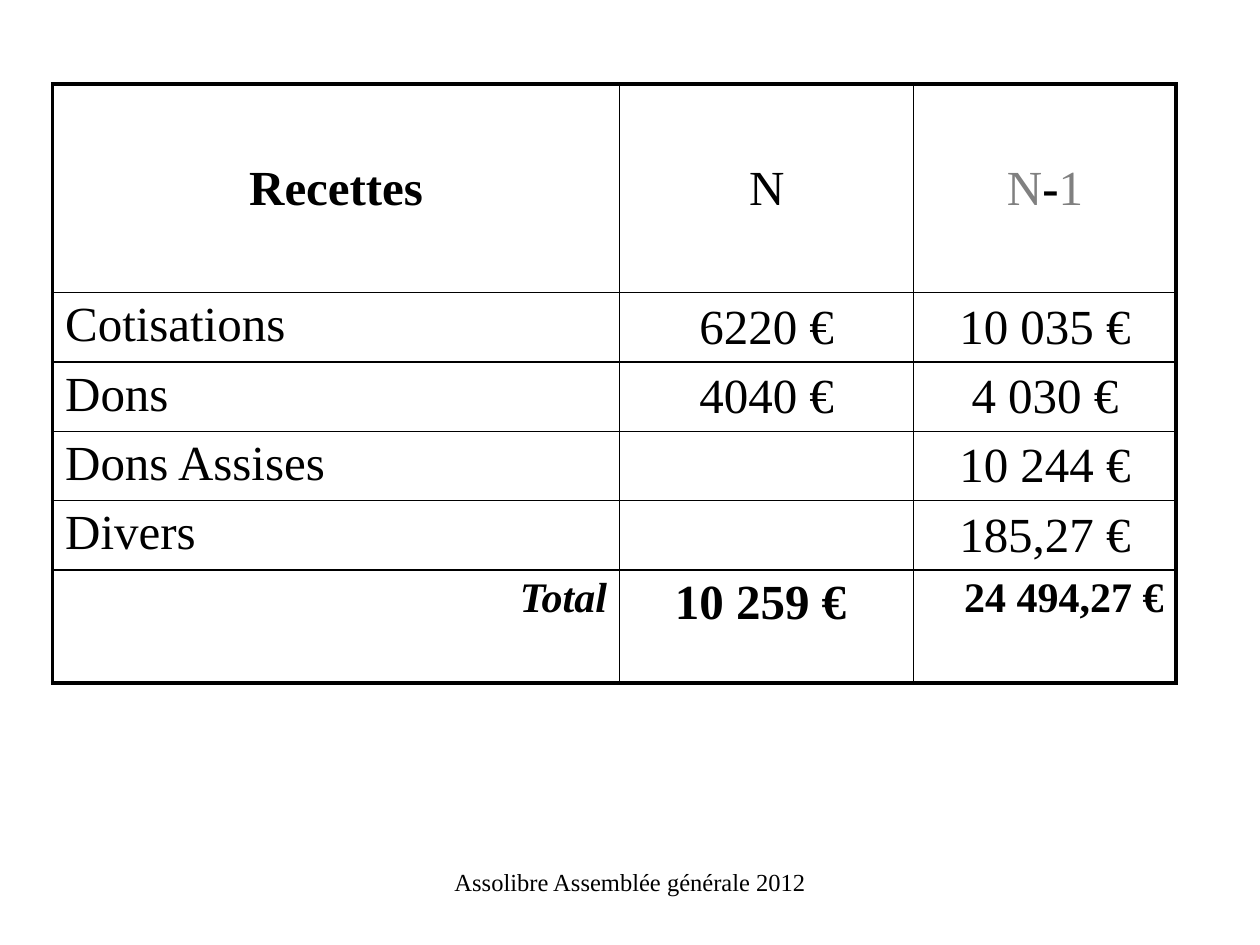
from lxml import etree
from pptx import Presentation
from pptx.dml.color import RGBColor
from pptx.enum.text import MSO_ANCHOR, PP_ALIGN
from pptx.oxml.ns import qn
from pptx.util import Cm, Pt

LEFT, CENTER, RIGHT = PP_ALIGN.LEFT, PP_ALIGN.CENTER, PP_ALIGN.RIGHT
TOP, MIDDLE = MSO_ANCHOR.TOP, MSO_ANCHOR.MIDDLE
FONT = "Times New Roman"
BLACK, GREY, WHITE = "000000", "808080", "FFFFFF"
THIN, THICK = Pt(1), Pt(2.25)

COLUMN_WIDTHS = [11.43, 5.93, 5.29]
ROW_HEIGHTS = [4.21] + [1.35] * 4 + [2.28]
RECEIPTS = [
    ("Recettes", "N", "N-1"),
    ("Cotisations", "6220 €", "10 035 €"),
    ("Dons", "4040 €", "4 030 €"),
    ("Dons Assises", "", "10 244 €"),
    ("Divers", "", "185,27 €"),
    ("Total", "10 259 € ", "24 494,27 €"),
]
LAST_ROW, LAST_COLUMN = len(RECEIPTS) - 1, len(COLUMN_WIDTHS) - 1


def color(hex_code):
    """Return the colour for a hex string."""
    return RGBColor.from_string(hex_code)


def style_paragraph(paragraph, size, align, bold=False, italic=False):
    """Set the alignment and font of a paragraph."""
    paragraph.alignment = align
    font = paragraph.font
    font.name, font.size = FONT, Pt(size)
    font.bold, font.italic = bold, italic
    font.color.rgb = color(BLACK)


def set_borders(cell, widths):
    """Draw the left, right, top and bottom borders of a cell, in that order."""
    properties = cell._tc.get_or_add_tcPr()
    for index, (side, width) in enumerate(zip(("lnL", "lnR", "lnT", "lnB"), widths)):
        line = etree.Element(qn(f"a:{side}"), w=str(width))
        fill = etree.SubElement(line, qn("a:solidFill"))
        etree.SubElement(fill, qn("a:srgbClr"), val=BLACK)
        properties.insert(index, line)


def cell_style(row, column):
    """Return the size, alignment, bold and italic of a table position."""
    if row == LAST_ROW:
        return (28, CENTER, True, False) if column == 1 else (24, RIGHT, True, column == 0)
    align = LEFT if column == 0 and row > 0 else CENTER
    return 28, align, row == 0 and column == 0, False


def fill_cell(cell, row, column, text):
    """Write and format one table cell."""
    cell.fill.solid()
    cell.fill.fore_color.rgb = color(WHITE)
    cell.margin_top, cell.margin_bottom = Cm(0.11), Cm(0.1)
    body_label = column == 0 and row > 0
    cell.vertical_anchor = TOP if body_label or row == LAST_ROW else MIDDLE
    paragraph = cell.text_frame.paragraphs[0]
    style_paragraph(paragraph, *cell_style(row, column))
    if text == "N-1":
        for character in text:
            run = paragraph.add_run()
            run.text = character
            run.font.bold = character == "-"
            run.font.color.rgb = color(BLACK if character == "-" else GREY)
    elif text:
        paragraph.add_run().text = text
    outer_sides = (column == 0, column == LAST_COLUMN, row == 0, row == LAST_ROW)
    set_borders(cell, [THICK if outer else THIN for outer in outer_sides])


def add_receipts_table(slide):
    """Add the table of receipts for both years."""
    table = slide.shapes.add_table(
        len(RECEIPTS), len(COLUMN_WIDTHS), Cm(1.06), Cm(1.69),
        Cm(sum(COLUMN_WIDTHS)), Cm(sum(ROW_HEIGHTS))).table
    for column, width in zip(table.columns, COLUMN_WIDTHS):
        column.width = Cm(width)
    for table_row, height in zip(table.rows, ROW_HEIGHTS):
        table_row.height = Cm(height)
    for row, texts in enumerate(RECEIPTS):
        for column, text in enumerate(texts):
            fill_cell(table.cell(row, column), row, column, text)


def add_footer(slide, text):
    """Add the centred footer line."""
    frame = slide.shapes.add_textbox(Cm(8.68), Cm(17.35), Cm(8.05), Cm(1.27)).text_frame
    frame.word_wrap = True
    paragraph = frame.paragraphs[0]
    paragraph.add_run().text = text
    style_paragraph(paragraph, 14, CENTER)


def main():
    """Build and save the slide."""
    presentation = Presentation()
    presentation.slide_width, presentation.slide_height = Cm(25.4), Cm(19.05)
    slide = presentation.slides.add_slide(presentation.slide_layouts[6])
    add_footer(slide, "Assolibre Assemblée générale 2012")
    add_receipts_table(slide)
    presentation.save("out.pptx")


if __name__ == "__main__":
    main()
